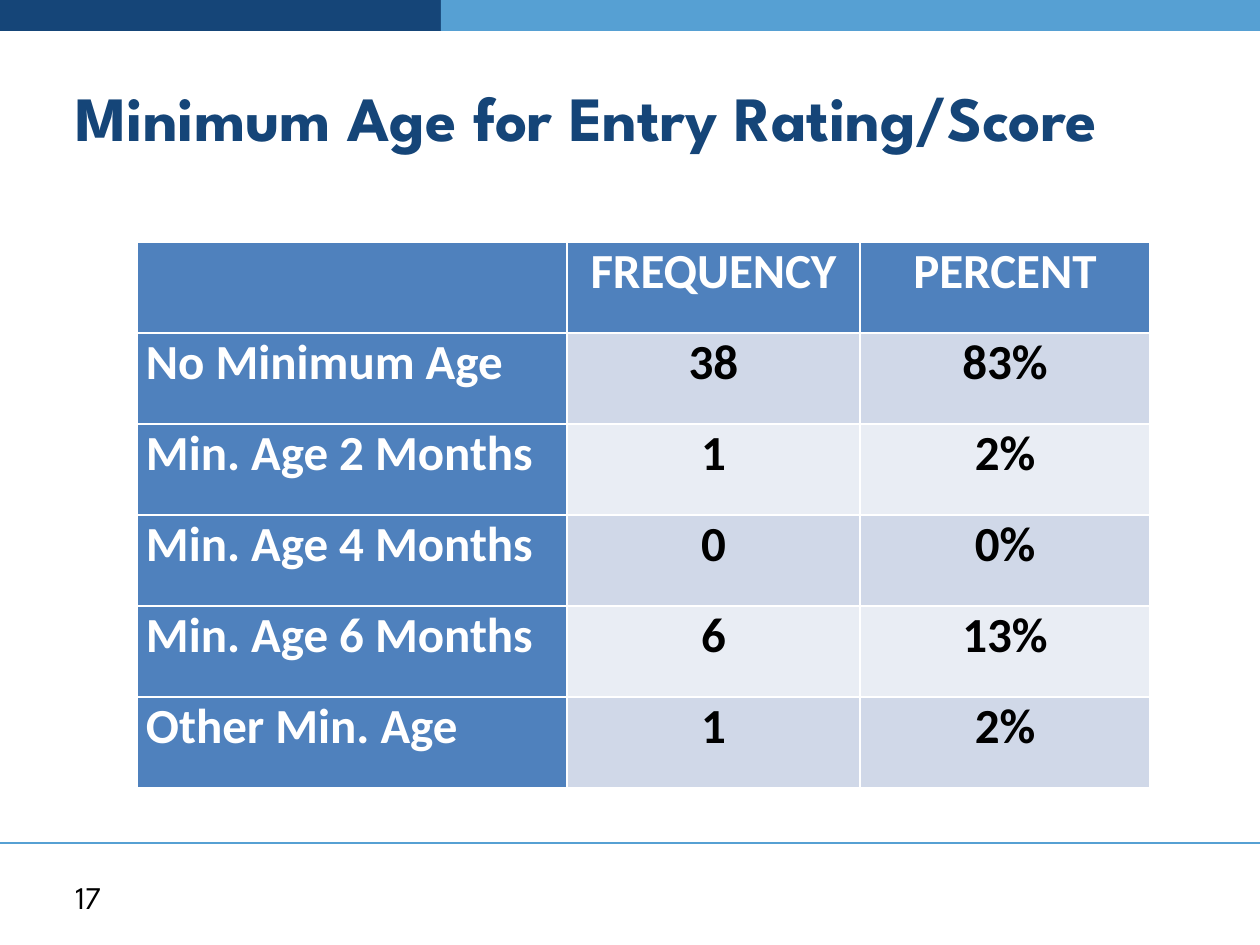
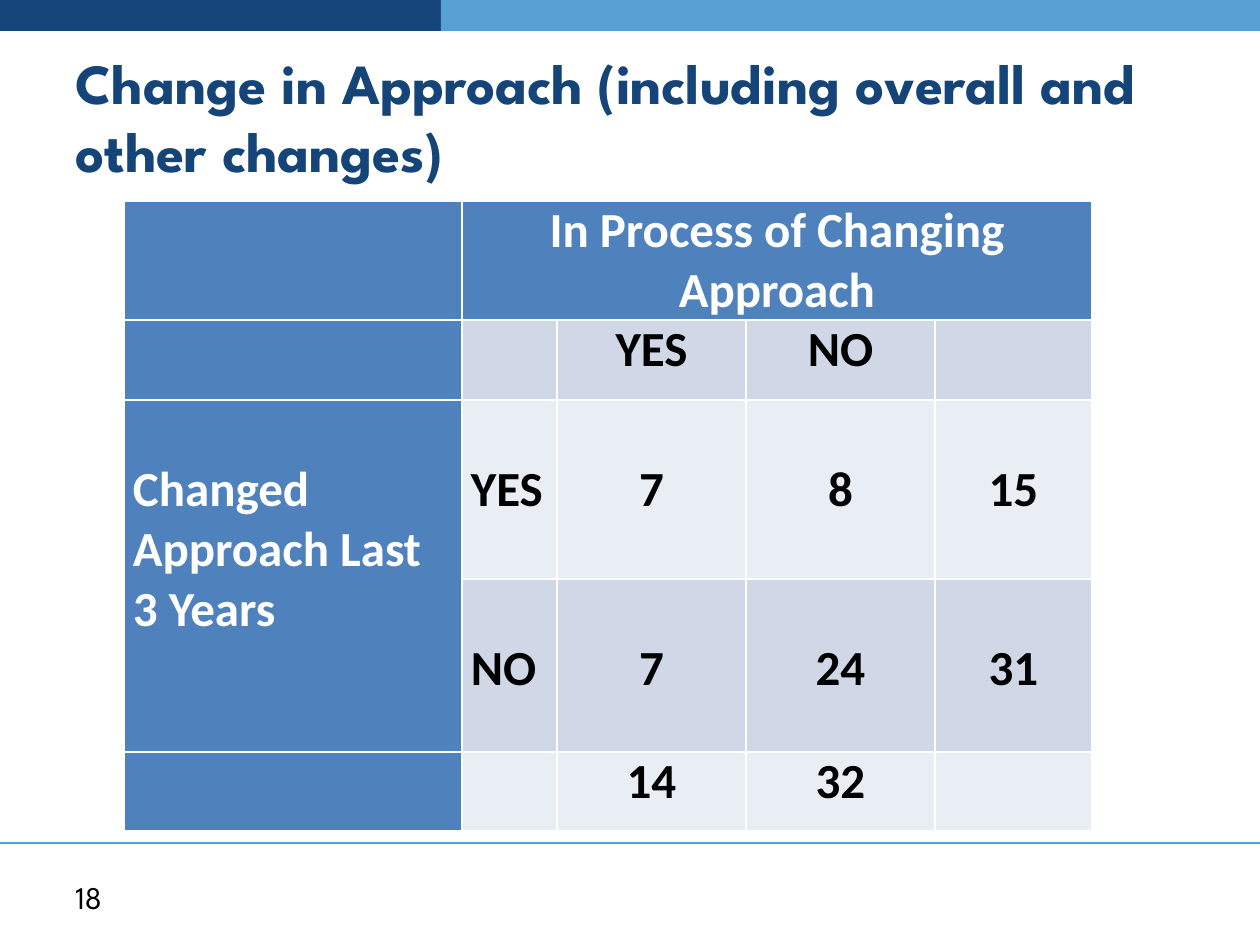
"""Build two slides of survey tables with a shared band, title, rule and page number."""
from lxml.etree import SubElement
from pptx import Presentation
from pptx.dml.color import RGBColor
from pptx.enum.shapes import MSO_CONNECTOR, MSO_SHAPE
from pptx.enum.text import MSO_ANCHOR, PP_ALIGN
from pptx.oxml.ns import qn
from pptx.util import Pt

PX = 914400 / 126
SLIDE_WIDTH, SLIDE_HEIGHT = 1260, 945
NAVY, SKY, WHITE, BLACK = "154578", "56A0D3", "FFFFFF", "000000"
HEADER_FILL, ROW_FILLS = "4F81BD", ("D0D8E8", "E9EDF4")

BANDS = [(0, 630, NAVY), (441, 819, SKY)]
BAND_TOP, BAND_HEIGHT, RULE_TOP = -158, 189, 843
TITLE_AREA = (63, 37, 1134, 158)
NUMBER_AREA = (63, 872, 294, 50)
CELL_INSET, LINE_HEIGHT = 9, 60

TITLE_FORMAT = {"name": "League Spartan", "bold": True}
NUMBER_FORMAT = {"name": "League Spartan", "size": Pt(18)}
CELL_FORMAT = {"name": "Calibri", "size": Pt(28), "bold": True}

SLIDES = [
    {
        "number": "17",
        "title": "Minimum Age for Entry Rating/Score",
        "title_size": 36,
        "corner": (137, 242),
        "columns": [430, 293, 290],
        "heights": [91] * 6,
        "merges": [],
        "lowered_rows": [],
        "left_columns": [0],
        "rows": [
            ("", "FREQUENCY", "PERCENT"),
            ("No Minimum Age", "38", "83%"),
            ("Min. Age 2 Months", "1", "2%"),
            ("Min. Age 4 Months", "0", "0%"),
            ("Min. Age 6 Months", "6", "13%"),
            ("Other Min. Age", "1", "2%"),
        ],
    },
    {
        "number": "18",
        "title": "Change in Approach (including overall and other changes)",
        "title_size": 32.4,
        "corner": (124, 201),
        "columns": [338, 95, 189, 189, 157],
        "heights": [119, 80, 179, 173, 79],
        "merges": [((0, 1), (0, 4)), ((2, 0), (3, 0))],
        "lowered_rows": [2, 3],
        "left_columns": [0, 1],
        "rows": [
            ("", "In Process of Changing Approach", "", "", ""),
            ("", "", "YES", "NO", ""),
            ("Changed Approach Last 3 Years", "YES", "7", "8", "15"),
            ("", "NO", "7", "24", "31"),
            ("", "", "14", "32", ""),
        ],
    },
]


def px(*lengths):
    return [round(length * PX) for length in lengths]


def color(value):
    return RGBColor.from_string(value)


def paint(shape, value):
    shape.fill.solid()
    shape.fill.fore_color.rgb = color(value)


def write(frame, text, value, font_format, align=PP_ALIGN.LEFT):
    para = frame.paragraphs[0]
    para.alignment = align
    span = para.add_run()
    span.text = text
    span.font.color.rgb = color(value)
    for name, setting in font_format.items():
        setattr(span.font, name, setting)


def add_text(page, area, text, value, font_format):
    frame = page.shapes.add_textbox(*px(*area)).text_frame
    frame.word_wrap = True
    frame.vertical_anchor = MSO_ANCHOR.MIDDLE
    write(frame, text, value, font_format)


def add_frame(page):
    rule = page.shapes.add_connector(
        MSO_CONNECTOR.STRAIGHT, *px(0, RULE_TOP, SLIDE_WIDTH, RULE_TOP))
    rule.line.color.rgb = color(SKY)
    rule.line.width = Pt(1.5)
    SubElement(rule._element.spPr, qn("a:effectLst"))
    for left, width, value in BANDS:
        band = page.shapes.add_shape(
            MSO_SHAPE.RECTANGLE, *px(left, BAND_TOP, width, BAND_HEIGHT))
        band.shadow.inherit = False
        band.line.fill.background()
        paint(band, value)


def fill_cell(cell, row, column, text, content):
    is_header = row == 0 or column == 0
    paint(cell, HEADER_FILL if is_header else ROW_FILLS[(row - 1) % 2])
    cell.margin_left, cell.margin_right = px(CELL_INSET, CELL_INSET)
    cell.margin_top, cell.margin_bottom = px(
        LINE_HEIGHT if row in content["lowered_rows"] else 0, 0)
    if text:
        is_left = row > 0 and column in content["left_columns"]
        write(cell.text_frame, text, WHITE if is_header else BLACK, CELL_FORMAT,
              PP_ALIGN.LEFT if is_left else PP_ALIGN.CENTER)


def add_grid(page, content):
    columns, heights = content["columns"], content["heights"]
    table = page.shapes.add_table(
        len(heights), len(columns),
        *px(*content["corner"], sum(columns), sum(heights))).table
    table.first_col = True
    for column, width in zip(table.columns, px(*columns)):
        column.width = width
    for row, height in zip(table.rows, px(*heights)):
        row.height = height
    for first, last in content["merges"]:
        table.cell(*first).merge(table.cell(*last))
    for row, texts in enumerate(content["rows"]):
        for column, text in enumerate(texts):
            fill_cell(table.cell(row, column), row, column, text, content)


def main():
    deck = Presentation()
    deck.slide_width, deck.slide_height = px(SLIDE_WIDTH, SLIDE_HEIGHT)
    for content in SLIDES:
        page = deck.slides.add_slide(deck.slide_layouts[6])
        add_frame(page)
        add_text(page, NUMBER_AREA, content["number"], BLACK, NUMBER_FORMAT)
        add_text(page, TITLE_AREA, content["title"], NAVY,
                 {**TITLE_FORMAT, "size": Pt(content["title_size"])})
        add_grid(page, content)
    deck.save("out.pptx")


if __name__ == "__main__":
    main()
